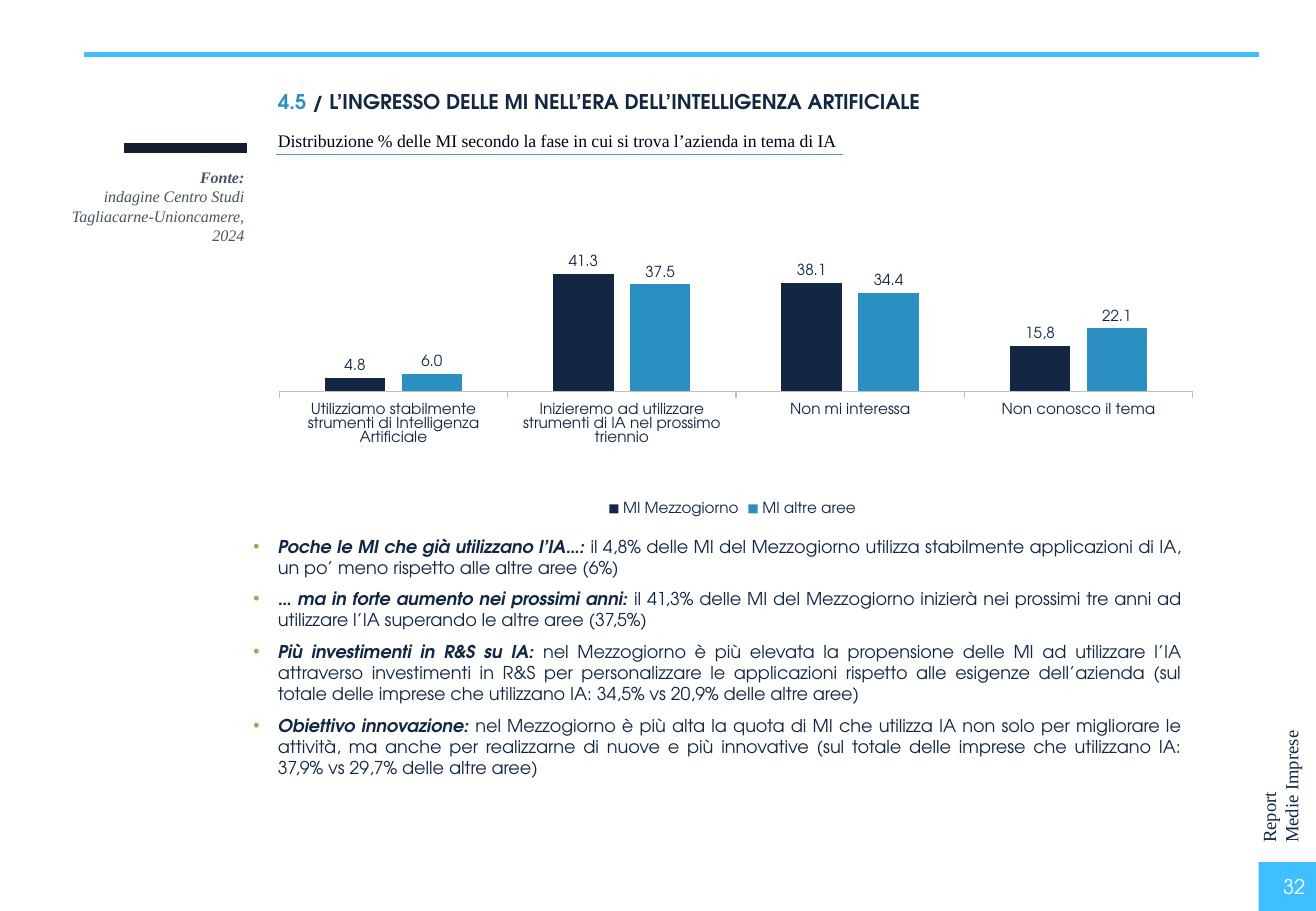
from lxml import etree
from pptx import Presentation
from pptx.chart.data import CategoryChartData
from pptx.dml.color import RGBColor
from pptx.enum.chart import XL_CHART_TYPE, XL_LABEL_POSITION, XL_LEGEND_POSITION, XL_TICK_MARK
from pptx.enum.shapes import MSO_CONNECTOR, MSO_SHAPE
from pptx.enum.text import MSO_ANCHOR, PP_ALIGN
from pptx.oxml import parse_xml
from pptx.oxml.ns import nsdecls, qn
from pptx.util import Cm, Pt

NAVY = RGBColor(0x13, 0x27, 0x45)
BLUE = RGBColor(0x2B, 0x8F, 0xC2)
SKY = RGBColor(0x40, 0xBF, 0xFF)
STEEL = RGBColor(0x53, 0x97, 0xC7)
INK = RGBColor(0x15, 0x1E, 0x31)
SLATE = RGBColor(0x48, 0x54, 0x63)
BLACK = RGBColor(0x00, 0x00, 0x19)
GREY = RGBColor(0xBF, 0xBF, 0xBF)
WHITE = RGBColor(0xFF, 0xFF, 0xFF)
GOLD = "BE9655"

SANS = "TeX Gyre Adventor"
SERIF = "Times New Roman"

LEFT, RIGHT, JUSTIFY = PP_ALIGN.LEFT, PP_ALIGN.RIGHT, PP_ALIGN.JUSTIFY
TOP, MIDDLE = MSO_ANCHOR.TOP, MSO_ANCHOR.MIDDLE
RECTANGLE = MSO_SHAPE.RECTANGLE
STRAIGHT = MSO_CONNECTOR.STRAIGHT
CLUSTERED = XL_CHART_TYPE.COLUMN_CLUSTERED
LEGEND_BOTTOM = XL_LEGEND_POSITION.BOTTOM
OUTSIDE_END = XL_LABEL_POSITION.OUTSIDE_END
TICK_OUTSIDE = XL_TICK_MARK.OUTSIDE

CATEGORIES = [
    "Utilizziamo stabilmente strumenti di Intelligenza Artificiale",
    "Inizieremo ad utilizzare strumenti di IA nel prossimo triennio",
    "Non mi interessa",
    "Non conosco il tema",
]
SERIES = [
    ("MI Mezzogiorno", [4.8, 41.3, 38.1, 15.9], NAVY),
    ("MI altre aree", [6, 37.5, 34.4, 22.1], BLUE),
]
PLOT_LAYOUT = {"x": 0.024, "y": 0.044, "w": 0.959, "h": 0.61}
FINDINGS = [
    ("Poche le MI che già utilizzano l’IA…: ",
     "il 4,8% delle MI del Mezzogiorno utilizza stabilmente applicazioni di IA, "
     "un po’ meno rispetto alle altre aree (6%)"),
    ("… ma in forte aumento nei prossimi anni: ",
     "il 41,3% delle MI del Mezzogiorno inizierà nei prossimi tre anni ad "
     "utilizzare l’IA superando le altre aree (37,5%)"),
    ("Più investimenti in R&S su IA: ",
     "nel Mezzogiorno è più elevata la propensione delle MI ad utilizzare l’IA "
     "attraverso investimenti in R&S per personalizzare le applicazioni rispetto "
     "alle esigenze dell’azienda (sul totale delle imprese che utilizzano IA: "
     "34,5% vs 20,9% delle altre aree)"),
    ("Obiettivo innovazione: ",
     "nel Mezzogiorno è più alta la quota di MI che utilizza IA non solo per "
     "migliorare le attività, ma anche per realizzarne di nuove e più innovative "
     "(sul totale delle imprese che utilizzano IA: 37,9% vs 29,7% delle altre aree)"),
]


def style_font(font, name, size, color, bold=False, italic=False):
    """Set the face, size, colour and emphasis of a font."""
    font.name, font.size = name, Pt(size)
    font.bold, font.italic = bold, italic
    font.color.rgb = color


def add_span(para, text, *style, **emphasis):
    """Append a formatted run to a paragraph."""
    span = para.add_run()
    span.text = text
    style_font(span.font, *style, **emphasis)


def add_text(page, place, lines, style, align=LEFT, anchor=TOP):
    """Add a wrapping text box with one paragraph per line and return it."""
    box = page.shapes.add_textbox(*map(Cm, place))
    frame = box.text_frame
    frame.word_wrap = True
    frame.vertical_anchor = anchor
    frame.text = "\n".join(lines)
    for para in frame.paragraphs:
        para.alignment = align
        for span in para.runs:
            style_font(span.font, *style)
    return box


def add_rule(page, left, top, right, color, width):
    """Add a horizontal line without shadow."""
    rule = page.shapes.add_connector(STRAIGHT, Cm(left), Cm(top), Cm(right), Cm(top))
    rule.line.color.rgb = color
    rule.line.width = Pt(width)
    etree.SubElement(rule.element.spPr, qn("a:effectLst"))


def add_title(page):
    """Place and format the two-colour section title."""
    title = page.shapes.title
    title.left, title.top, title.width, title.height = map(Cm, (5.56, 1.75, 21.92, 0.76))
    title.text_frame.vertical_anchor = TOP
    para = title.text_frame.paragraphs[0]
    para.alignment = LEFT
    add_span(para, "4.5 ", SANS, 12, BLUE, bold=True)
    add_span(para, "/ L’INGRESSO DELLE MI NELL’ERA DELL’INTELLIGENZA ARTIFICIALE",
             SANS, 12, NAVY, bold=True)


def add_bullet(para):
    """Give a paragraph a hanging gold bullet."""
    properties = para._p.get_or_add_pPr()
    properties.set("marL", str(Cm(0.51)))
    properties.set("indent", str(-Cm(0.51)))
    color = etree.SubElement(properties, qn("a:buClr"))
    etree.SubElement(color, qn("a:srgbClr"), val=GOLD)
    etree.SubElement(properties, qn("a:buFont"), typeface="Arial")
    etree.SubElement(properties, qn("a:buChar"), char="•")


def add_findings(page):
    """Add the bulleted findings, each with an emphasised lead."""
    box = page.shapes.add_textbox(*map(Cm, (5.05, 11.07, 19.91, 5.38)))
    frame = box.text_frame
    frame.word_wrap = True
    for index, (lead, detail) in enumerate(FINDINGS):
        para = frame.add_paragraph() if index else frame.paragraphs[0]
        add_bullet(para)
        para.alignment = JUSTIFY
        para.space_after = Pt(6)
        add_span(para, lead, SANS, 10.5, NAVY, bold=True, italic=True)
        add_span(para, detail, SANS, 10.5, NAVY)


def set_plot_layout(chart):
    """Fix the inner plot area within the chart."""
    plot_area = chart.element.find(".//" + qn("c:plotArea"))
    for layout in plot_area.findall(qn("c:layout")):
        plot_area.remove(layout)
    modes = "".join(f'<c:{axis}Mode val="edge"/>' for axis in "xy")
    sizes = "".join(f'<c:{key} val="{value}"/>' for key, value in PLOT_LAYOUT.items())
    plot_area.insert(0, parse_xml(
        f'<c:layout {nsdecls("c")}><c:manualLayout><c:layoutTarget val="inner"/>'
        f"{modes}{sizes}</c:manualLayout></c:layout>"))


def style_axes(chart):
    """Show the category axis only and fix the value scale."""
    values = chart.value_axis
    values.minimum_scale, values.maximum_scale = 0, 80
    values.has_major_gridlines = False
    values.visible = False
    categories = chart.category_axis
    categories.major_tick_mark = TICK_OUTSIDE
    categories.format.line.color.rgb = GREY
    categories.format.line.width = Pt(0.75)
    style_font(categories.tick_labels.font, SANS, 9, NAVY)


def style_series(series, color):
    """Colour a series and label its columns."""
    series.format.fill.solid()
    series.format.fill.fore_color.rgb = color
    labels = series.data_labels
    labels.show_value = True
    labels.position = OUTSIDE_END
    labels.number_format = "0.0"
    labels.number_format_is_linked = False
    style_font(labels.font, SANS, 9, NAVY)


def add_phase_chart(page):
    """Add the clustered columns of firms by AI phase."""
    data = CategoryChartData(number_format="0.0")
    data.categories = CATEGORIES
    for name, values, _ in SERIES:
        data.add_series(name, values)
    chart = page.shapes.add_chart(CLUSTERED, *map(Cm, (5.36, 3.07, 19.91, 7.82)), data).chart
    chart.has_title = False
    style_font(chart.font, SANS, 10, NAVY)
    chart.has_legend = True
    chart.legend.position = LEGEND_BOTTOM
    chart.legend.include_in_layout = False
    style_font(chart.legend.font, SANS, 9, NAVY)
    plot = chart.plots[0]
    plot.vary_by_categories = False
    plot.gap_width, plot.overlap = 150, -27
    for series, (_, _, color) in zip(plot.series, SERIES):
        style_series(series, color)
    label = plot.series[0].points[3].data_label
    add_span(label.text_frame.paragraphs[0], "15,8", SANS, 9, NAVY)
    label.position = OUTSIDE_END
    style_axes(chart)
    set_plot_layout(chart)


def add_page_marks(page):
    """Add the top rule, the vertical report name and the page number."""
    tile = page.shapes.add_shape(RECTANGLE, *map(Cm, (26.31, 18.03, 1.2, 1.02)))
    tile.shadow.inherit = False
    tile.fill.solid()
    tile.fill.fore_color.rgb = SKY
    tile.line.fill.background()
    report = add_text(page, (24.36, 14.88, 4.8, 1.19), ["Report", "Medie Imprese"],
                      (SERIF, 11, NAVY))
    report.rotation = 270
    add_rule(page, 1.75, 1.14, 26.31, SKY, 2.5)
    add_text(page, (21.34, 18.03, 6.2, 1.02), ["32"], (SANS, 12, WHITE), RIGHT, MIDDLE)


def main():
    """Build the slide and save the deck."""
    deck = Presentation()
    deck.slide_width, deck.slide_height = Cm(27.51), Cm(19.05)
    page = deck.slides.add_slide(deck.slide_layouts[5])
    add_page_marks(page)
    add_findings(page)
    add_title(page)
    add_text(page, (5.56, 2.59, 20.7, 0.71),
             ["Distribuzione % delle MI secondo la fase in cui si trova l’azienda in tema di IA"],
             (SERIF, 10.5, BLACK))
    add_rule(page, 5.77, 3.23, 17.63, STEEL, 0.75)
    add_rule(page, 2.59, 3.1, 5.16, INK, 6)
    source = add_text(page, (1.19, 3.38, 4.17, 2.29),
                      ["Fonte:", "indagine Centro Studi Tagliacarne-Unioncamere, 2024"],
                      (SERIF, 9.5, SLATE, False, True), RIGHT)
    source.text_frame.paragraphs[0].runs[0].font.bold = True
    add_phase_chart(page)
    deck.save("out.pptx")


if __name__ == "__main__":
    main()
